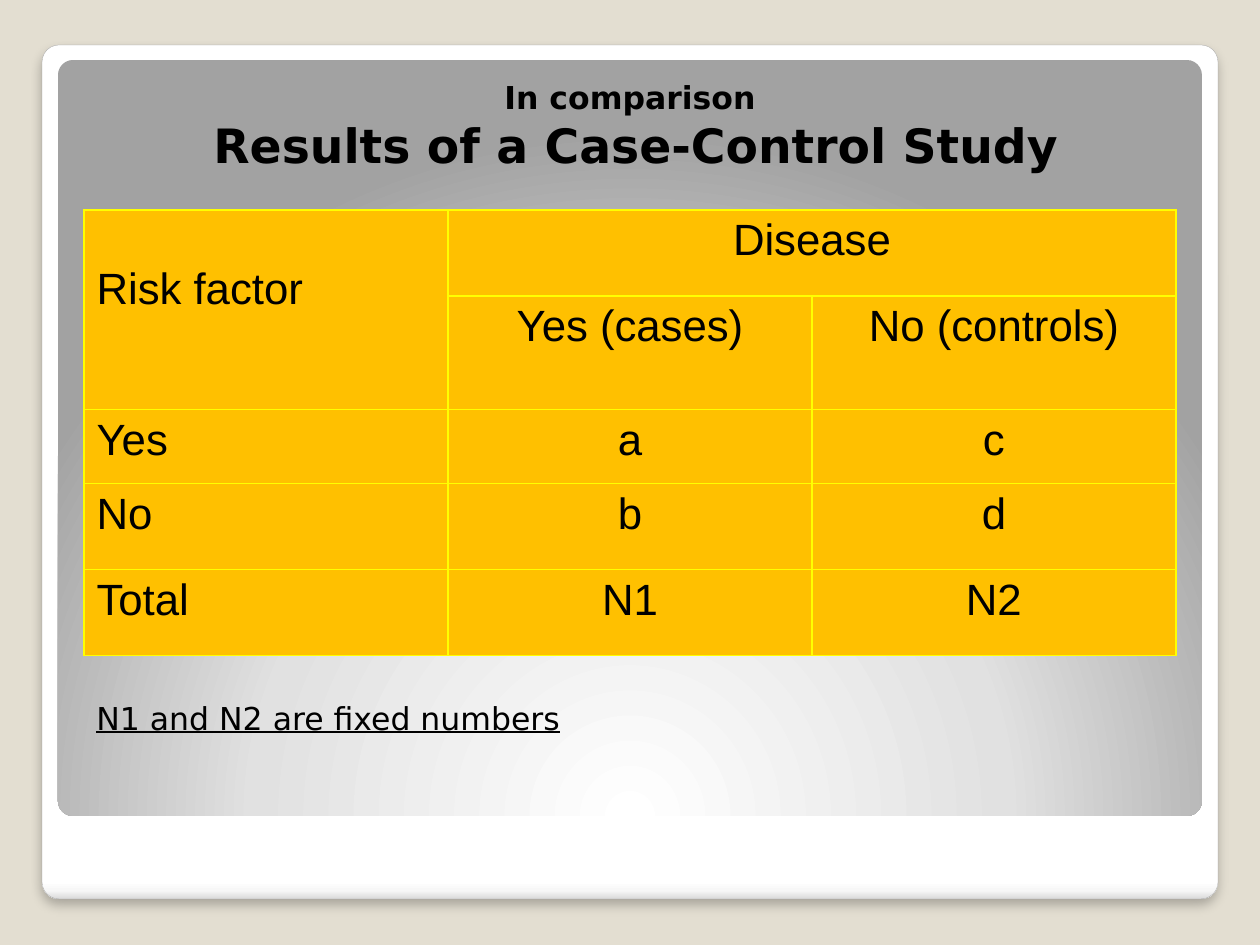
from lxml import etree
from pptx import Presentation
from pptx.dml.color import RGBColor
from pptx.enum.shapes import MSO_SHAPE
from pptx.enum.text import MSO_ANCHOR, PP_ALIGN
from pptx.oxml.ns import qn
from pptx.util import Emu, Pt

EMU_PER_PX = 914400 / 126
ROUNDED = MSO_SHAPE.ROUNDED_RECTANGLE
TOP, BOTTOM = MSO_ANCHOR.TOP, MSO_ANCHOR.BOTTOM
LEFT, CENTER = PP_ALIGN.LEFT, PP_ALIGN.CENTER

BLACK = RGBColor(0x00, 0x00, 0x00)
WHITE = RGBColor(0xFF, 0xFF, 0xFF)
BEIGE = RGBColor(0xE3, 0xDE, 0xD1)
FRAME_LINE = RGBColor(0xA4, 0xA4, 0xA4)
AMBER = RGBColor(0xFF, 0xC0, 0x00)
YELLOW = RGBColor(0xFF, 0xFF, 0x00)
FRAME_STOPS = [
    (0, WHITE),
    (98, WHITE),
    (99, RGBColor(0xF7, 0xF7, 0xF7)),
    (100, RGBColor(0xDA, 0xDA, 0xDA)),
]
PANEL_STOPS = [
    (0, WHITE),
    (55, RGBColor(0xE1, 0xE1, 0xE1)),
    (100, RGBColor(0xA2, 0xA2, 0xA2)),
]

HEADING_FONT = "DejaVu Sans"
TABLE_FONT = "Arial"
COLUMN_WIDTH = 364
ROW_HEIGHTS = [86, 110, 74, 86, 86]
RISK_FACTOR_TOP_MARGIN = 55
TABLE_ROWS = [
    ["Risk factor", "Disease", ""],
    ["", "Yes (cases)", "No (controls)"],
    ["Yes", "a", "c"],
    ["No", "b", "d"],
    ["Total", "N1", "N2"],
]


def px(value):
    return Emu(round(value * EMU_PER_PX))


def add_element(parent, tag, **attributes):
    values = {name: str(value) for name, value in attributes.items()}
    return etree.SubElement(parent, qn(tag), values)


def set_gradient(shape, stops, radial):
    shape.fill.background()
    properties = shape._element.spPr
    no_fill = properties.find(qn("a:noFill"))
    gradient = add_element(properties, "a:gradFill", rotWithShape=1)
    stop_list = add_element(gradient, "a:gsLst")
    for position, color in stops:
        stop = add_element(stop_list, "a:gs", pos=position * 1000)
        add_element(stop, "a:srgbClr", val=color)
    if radial:
        focus = add_element(gradient, "a:path", path="circle")
        add_element(focus, "a:fillToRect", l=50000, t=175000, r=50000, b=-75000)
    else:
        add_element(gradient, "a:lin", ang=90 * 60000, scaled=0)
    properties.replace(no_fill, gradient)


def add_panel(slide, left, top, width, height, stops, radial=False):
    panel = slide.shapes.add_shape(ROUNDED, px(left), px(top), px(width), px(height))
    panel.adjustments[0] = 0.02
    panel.line.fill.background()
    panel.shadow.inherit = False
    set_gradient(panel, stops, radial)
    return panel


def add_shadow(shape):
    effects = shape._element.spPr.find(qn("a:effectLst"))
    shadow = add_element(effects, "a:outerShdw", blurRad=Pt(6), dist=Pt(4),
                         dir=90 * 60000, algn="tl", rotWithShape=0)
    color = add_element(shadow, "a:srgbClr", val=BLACK)
    add_element(color, "a:alpha", val=25000)


def add_run(paragraph, text, size, font_name, bold=False, underline=False):
    run = paragraph.add_run()
    run.text = text
    font = run.font
    font.size = Pt(size)
    font.name = font_name
    font.bold = bold
    font.underline = underline
    font.color.rgb = BLACK


def add_text_box(slide, left, top, width, height, anchor, alignment):
    box = slide.shapes.add_textbox(px(left), px(top), px(width), px(height))
    frame = box.text_frame
    frame.word_wrap = True
    frame.vertical_anchor = anchor
    paragraph = frame.paragraphs[0]
    paragraph.alignment = alignment
    return paragraph


def style_cell(cell):
    properties = cell._tc.get_or_add_tcPr()
    for side in ("a:lnL", "a:lnR", "a:lnT", "a:lnB"):
        line = add_element(properties, side, w=Pt(1))
        fill = add_element(line, "a:solidFill")
        add_element(fill, "a:srgbClr", val=YELLOW)
    cell.fill.solid()
    cell.fill.fore_color.rgb = AMBER


def add_results_table(slide, left, top):
    column_count = len(TABLE_ROWS[0])
    table = slide.shapes.add_table(
        len(TABLE_ROWS), column_count, px(left), px(top),
        px(COLUMN_WIDTH * column_count), px(sum(ROW_HEIGHTS))).table
    table.first_row = False
    table.horz_banding = False
    for column in table.columns:
        column.width = px(COLUMN_WIDTH)
    for row, height in zip(table.rows, ROW_HEIGHTS):
        row.height = px(height)
    for row_index, texts in enumerate(TABLE_ROWS):
        for column_index, text in enumerate(texts):
            cell = table.cell(row_index, column_index)
            style_cell(cell)
            if text:
                paragraph = cell.text_frame.paragraphs[0]
                paragraph.alignment = CENTER if column_index else LEFT
                add_run(paragraph, text, 25, TABLE_FONT)
    risk_factor = table.cell(0, 0)
    risk_factor.margin_top = px(RISK_FACTOR_TOP_MARGIN)
    risk_factor.merge(table.cell(1, 0))
    table.cell(0, 1).merge(table.cell(0, 2))


def main():
    presentation = Presentation()
    presentation.slide_width = px(1260)
    presentation.slide_height = px(945)
    slide = presentation.slides.add_slide(presentation.slide_layouts[6])
    slide.background.fill.solid()
    slide.background.fill.fore_color.rgb = BEIGE

    frame = add_panel(slide, 42, 45, 1176, 854, FRAME_STOPS)
    frame.line.color.rgb = FRAME_LINE
    frame.line.width = Pt(0.16)
    add_shadow(frame)
    add_panel(slide, 58, 60, 1144, 756, PANEL_STOPS, radial=True)

    title = add_text_box(slide, 32, 84, 1207, 95, BOTTOM, CENTER)
    add_run(title, "In comparison ", 18, HEADING_FONT, bold=True)
    title.add_line_break()
    add_run(title, "Results of a Case-Control Study", 27, HEADING_FONT, bold=True)

    add_results_table(slide, 84, 210)

    note = add_text_box(slide, 84, 693, 1050, 50, TOP, LEFT)
    add_run(note, "N1 and N2 are fixed numbers", 18, HEADING_FONT, underline=True)

    presentation.save("out.pptx")


if __name__ == "__main__":
    main()
